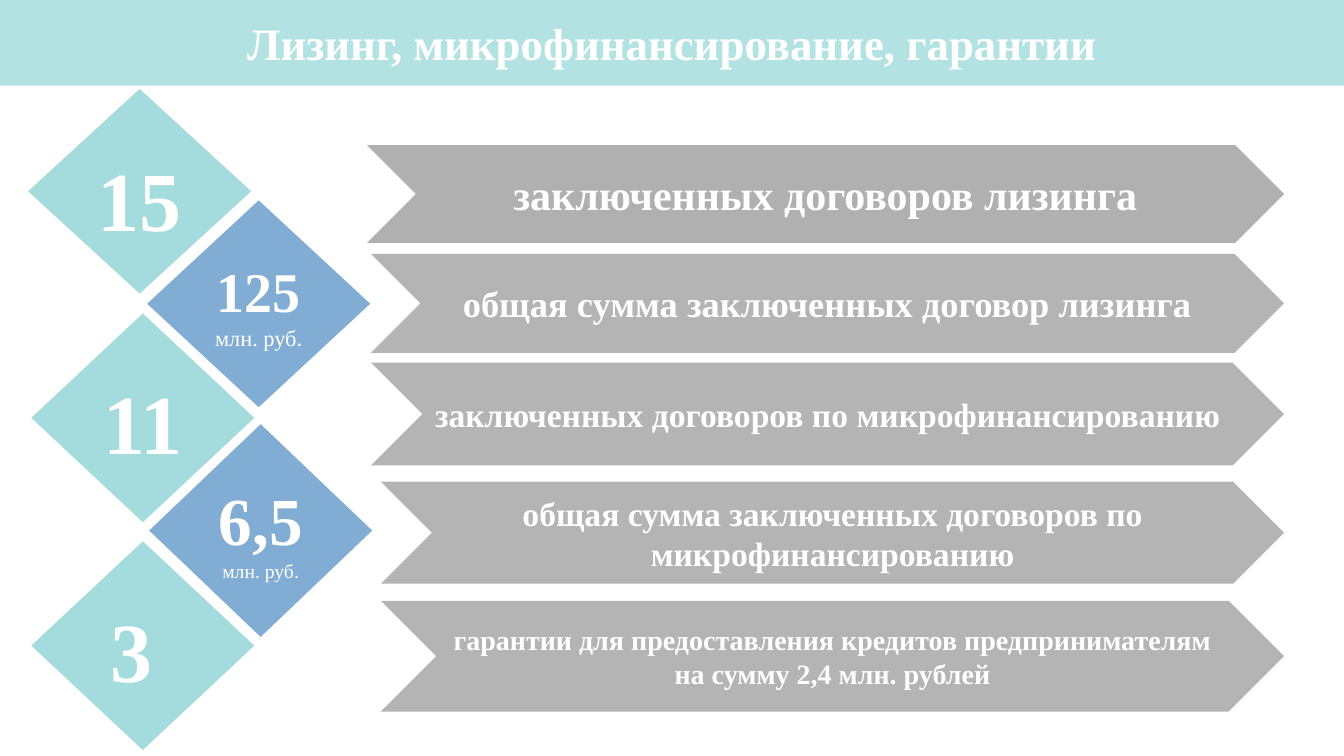
import pptx
import pptx.util
import pptx.dml.color
import pptx.enum.shapes
import pptx.enum.text
import pptx.oxml.ns
import lxml.etree

Cm = pptx.util.Cm
KIND = pptx.enum.shapes.MSO_SHAPE
SERIF = "Times New Roman"
COLORS = {"teal": "68C6C8", "blue": "2E75B6", "gray": "808080", "white": "FFFFFF"}
WIDE, HIGH = 33.87, 19.05
EDGE = 32.36
SPAN = 5.62

COUNTS = [
    ("15", 72, 0.71, 2.24, 5.16),
    ("11", 66, 0.79, 7.9, 5.26),
    ("3", 66, 0.79, 13.64, 5.26),
]
SUMS = [
    ("125", 40, 16, 3.71, 5.05, 5.21),
    ("6,5", 48, 14, 3.76, 10.69, 5.36),
]
ARROWS = [
    (["заключенных договоров лизинга"], 30, 9.25, 3.66, 2.46, 62),
    (["общая сумма заключенных договор лизинга"], 26, 9.35, 6.4, 2.49, 59),
    (["заключенных договоров по микрофинансированию"], 24, 9.35, 9.14, 2.59, 59),
    (["общая сумма заключенных договоров по микрофинансированию"], 24, 9.6, 12.14, 2.57, 59),
    (["гарантии для предоставления кредитов предпринимателям",
      "на сумму 2,4 млн. рублей"], 20, 9.6, 15.14, 2.79, 59),
]


def rgb(name):
    return pptx.dml.color.RGBColor.from_string(COLORS[name])


def add_block(slide, kind, box, color, alpha):
    shape = slide.shapes.add_shape(kind, *[Cm(side) for side in box])
    shape.shadow.inherit = False
    shape.line.fill.background()
    shape.fill.solid()
    shape.fill.fore_color.rgb = rgb(color)
    tint = shape.fill._xPr.find(".//" + pptx.oxml.ns.qn("a:srgbClr"))
    lxml.etree.SubElement(tint, pptx.oxml.ns.qn("a:alpha"), val=str(alpha * 1000))
    frame = shape.text_frame
    frame.word_wrap = True
    frame.vertical_anchor = pptx.enum.text.MSO_ANCHOR.MIDDLE
    return frame


def style(font, size=None, bold=None, name=None):
    if size:
        font.size = pptx.util.Pt(size)
    if bold is not None:
        font.bold = bold
    if name:
        font.name = name


def add_line(frame, index, size, bold, text=""):
    line = frame.add_paragraph() if index else frame.paragraphs[0]
    line.alignment = pptx.enum.text.PP_ALIGN.CENTER
    style(line.font, size, bold, SERIF)
    line.font.color.rgb = rgb("white")
    if text:
        line.add_run().text = text
    return line


def add_run(line, text, **look):
    run = line.add_run()
    run.text = text
    style(run.font, **look)


def add_count(slide, text, gap, left, top, height):
    frame = add_block(slide, KIND.DIAMOND, (left, top, SPAN, height), "teal", 60)
    line = add_line(frame, 0, None, None)
    add_run(line, text, size=60, bold=True)
    add_run(line, " ", size=gap, bold=False)


def add_sum(slide, text, size, small, left, top, height):
    frame = add_block(slide, KIND.DIAMOND, (left, top, SPAN, height), "blue", 60)
    add_line(frame, 0, size, True, text)
    unit = add_line(frame, 1, small, False, "млн. руб")
    add_run(unit, ".", name="Calibri")


def add_arrow(slide, texts, size, left, top, height, alpha):
    box = (left, top, EDGE - left, height)
    frame = add_block(slide, KIND.CHEVRON, box, "gray", alpha)
    for index, text in enumerate(texts):
        add_line(frame, index, size, True, text)


def add_title(slide, text):
    frame = add_block(slide, KIND.RECTANGLE, (0, 0, WIDE, 2.16), "teal", 50)
    add_line(frame, 0, 32, True, text)


def main():
    deck = pptx.Presentation()
    deck.slide_width, deck.slide_height = Cm(WIDE), Cm(HIGH)
    slide = deck.slides.add_slide(deck.slide_layouts[6])
    add_title(slide, "Лизинг, микрофинансирование, гарантии")
    for count in COUNTS:
        add_count(slide, *count)
    for total in SUMS:
        add_sum(slide, *total)
    for arrow in ARROWS:
        add_arrow(slide, *arrow)
    deck.save("out.pptx")


if __name__ == "__main__":
    main()
